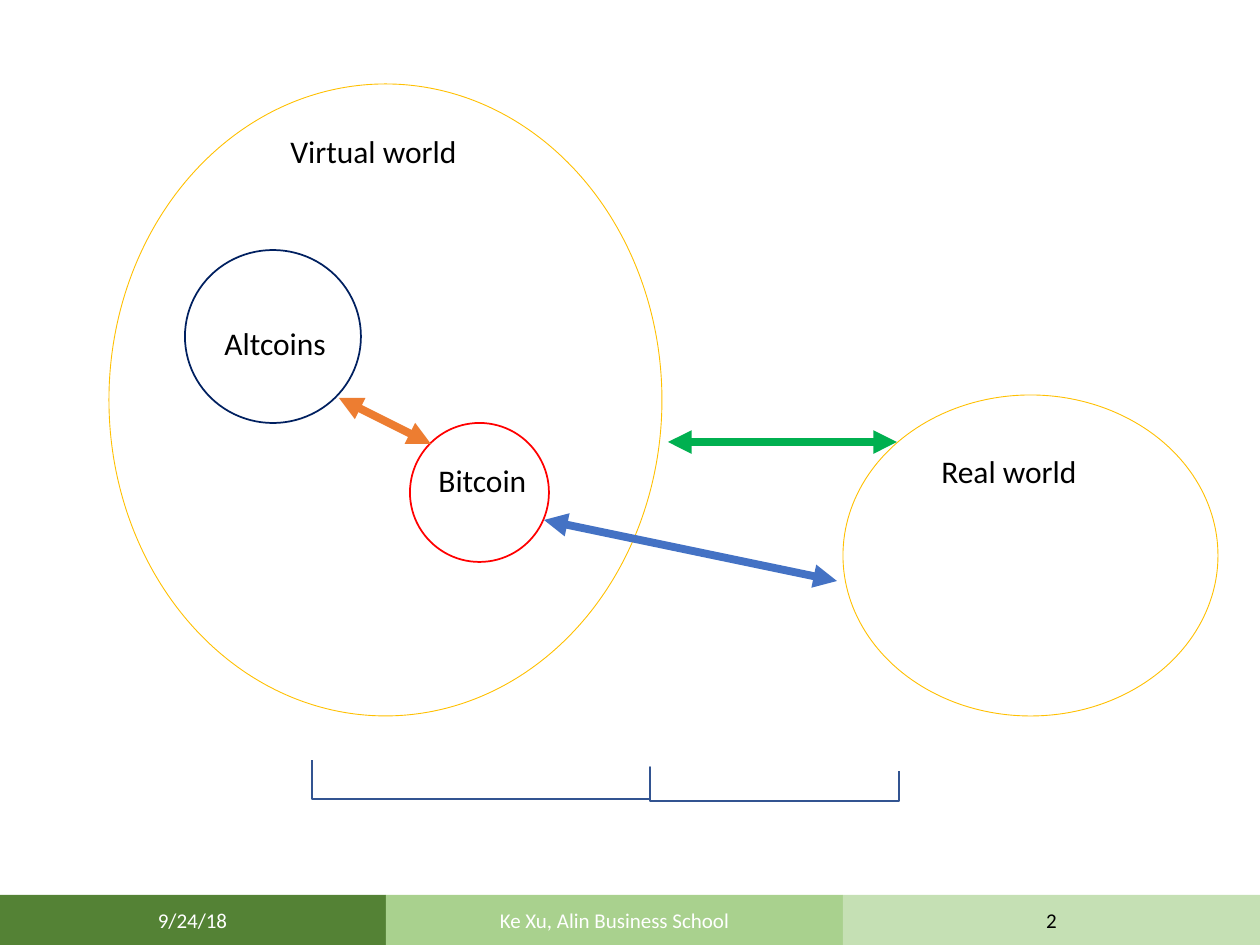
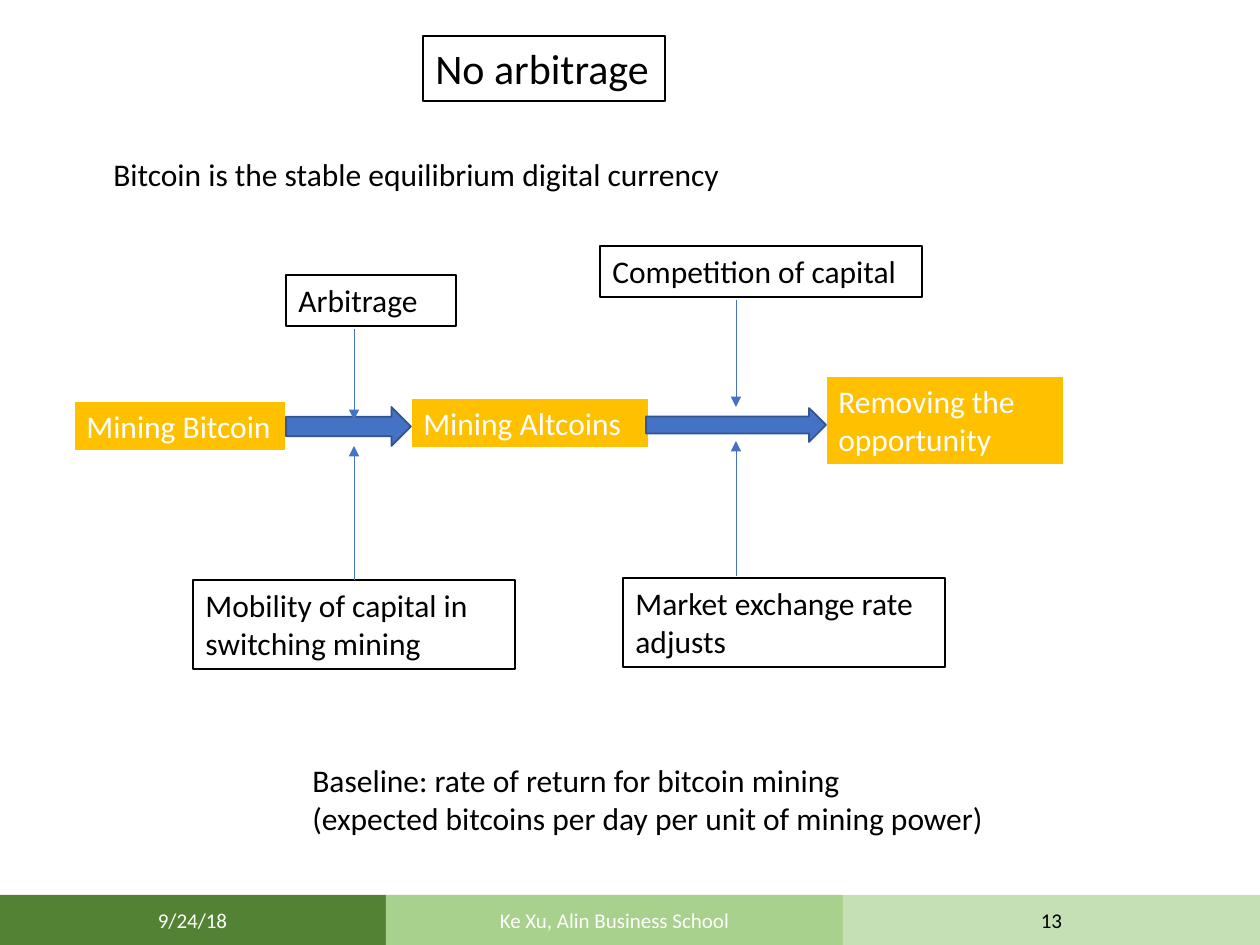
from lxml import etree
from pptx import Presentation
from pptx.dml.color import RGBColor
from pptx.enum.shapes import MSO_CONNECTOR, MSO_SHAPE
from pptx.enum.text import MSO_ANCHOR, PP_ALIGN
from pptx.oxml.ns import qn
from pptx.util import Pt

RECT, OVAL, ARROW = MSO_SHAPE.RECTANGLE, MSO_SHAPE.OVAL, MSO_SHAPE.RIGHT_ARROW
STRAIGHT = MSO_CONNECTOR.STRAIGHT
TOP, MIDDLE = MSO_ANCHOR.TOP, MSO_ANCHOR.MIDDLE
LEFT, CENTER = PP_ALIGN.LEFT, PP_ALIGN.CENTER

EMU_PER_PX = 914400 / 126
WIDTH, HEIGHT = 1260, 945
FONT = "Calibri"
COLORS = {
    "white": "FFFFFF", "black": "000000", "gold": "FFC000", "navy": "002060",
    "red": "FF0000", "orange": "ED7D31", "blue": "4472C4", "dark blue": "325491",
    "green": "00B050", "band dark": "548235", "band mid": "A9D18E",
    "band light": "C5E0B4",
}

# Footer: left edge, fill, text colour, text (None stands for the slide number)
FOOTER_TOP = 895
FOOTER = [
    (-1, "band dark", "white", "9/24/18"),
    (386, "band mid", "white", "Ke Xu, Alin Business School"),
    (843, "band light", "black", None),
]

# Worlds slide: boxes are (left, top, width, height)
WORLD_LABELS = [
    ("Real world", (929, 446, 290, 50)),
    ("Virtual world", (278, 126, 290, 50)),
    ("Altcoins", (212, 318, 142, 50)),
    ("Bitcoin", (426, 455, 142, 50)),
]
CIRCLES = [
    ((109, 84, 553, 632), "gold", 0.5),
    ((185, 250, 176, 173), "navy", 1),
    ((843, 395, 375, 321), "gold", 0.5),
    ((410, 423, 139, 139), "red", 1),
]
EXCHANGES = [
    ((339, 398), (431, 444), "orange"),
    ((544, 520), (837, 581), "blue"),
    ((668, 442), (897, 442), "green"),
]
BRACKET = [(312, 760), (312, 799), (650, 799), (650, 767),
           (650, 801), (899, 801), (899, 771)]

# Arbitrage slide
TITLE = ("No arbitrage", (423, 36, 242, 65))
NOTES = [
    ("Bitcoin is the stable equilibrium digital currency", (101, 149, 644, 50)),
    ("Baseline: rate of return for bitcoin mining\n"
     "(expected bitcoins per day per unit of mining power)", (300, 755, 708, 89)),
]
STEPS = [
    ("Mining Bitcoin", (74, 401, 212, 50)),
    ("Mining Altcoins", (411, 398, 238, 50)),
    ("Removing the opportunity", (826, 376, 238, 89)),
]
STEP_ARROWS = [(286, 407, 125, 39), (646, 408, 180, 34)]
# Each cause: text, box, arrow x, arrow start y, arrow end y
CAUSES = [
    ("Arbitrage", (286, 275, 170, 51), 354, 329, 420),
    ("Competition of capital", (600, 246, 322, 51), 736, 300, 407),
    ("Mobility of capital in switching mining", (193, 580, 322, 89), 354, 580, 446),
    ("Market exchange rate adjusts", (623, 578, 322, 89), 736, 576, 441),
]


def px(*lengths):
    return [round(n * EMU_PER_PX) for n in lengths]


def rgb(name):
    return RGBColor.from_string(COLORS[name])


def set_line(sp, color, width):
    sp.line.color.rgb = rgb(color)
    sp.line.width = Pt(width)


def paint(sp, fill=None, line=None, width=1):
    sp.shadow.inherit = False
    if fill:
        sp.fill.solid()
        sp.fill.fore_color.rgb = rgb(fill)
    else:
        sp.fill.background()
    if line:
        set_line(sp, line, width)
    else:
        sp.line.fill.background()
    return sp


def add_shape(slide, kind, box, **look):
    return paint(slide.shapes.add_shape(kind, *px(*box)), **look)


def write(sp, text, size=18, color="black", align=LEFT, anchor=TOP):
    tf = sp.text_frame
    tf.word_wrap = True
    tf.vertical_anchor = anchor
    for i, line in enumerate(text.split("\n")):
        p = tf.paragraphs[0] if i == 0 else tf.add_paragraph()
        p.alignment = align
        r = p.add_run()
        r.text = line
        r.font.name, r.font.size = FONT, Pt(size)
        r.font.color.rgb = rgb(color)


def add_label(slide, text, box):
    write(slide.shapes.add_textbox(*px(*box)), text)


def add_arrow(slide, start, end, color, width, ends=("tailEnd",)):
    """ends takes headEnd (at start) before tailEnd (at end)."""
    cxn = slide.shapes.add_connector(STRAIGHT, *px(*start, *end))
    set_line(cxn, color, width)
    for tag in ends:
        etree.SubElement(cxn.line._get_or_add_ln(), qn(f"a:{tag}"), type="triangle")
    etree.SubElement(cxn._element.spPr, qn("a:effectLst"))
    return cxn


def add_slide(prs, number):
    slide = prs.slides.add_slide(prs.slide_layouts[6])
    rights = [band[0] for band in FOOTER[1:]] + [WIDTH]
    for (left, fill, color, text), right in zip(FOOTER, rights):
        box = (left, FOOTER_TOP, right - left, HEIGHT - FOOTER_TOP)
        sp = add_shape(slide, RECT, box, fill=fill)
        write(sp, text or str(number), size=12, color=color,
              align=CENTER, anchor=MIDDLE)
    return slide


def build_worlds(prs):
    slide = add_slide(prs, 2)
    for text, box in WORLD_LABELS:
        add_label(slide, text, box)
    for box, color, width in CIRCLES:
        add_shape(slide, OVAL, box, line=color, width=width)
    for start, end, color in EXCHANGES:
        add_arrow(slide, start, end, color, 4.5, ends=("headEnd", "tailEnd"))
    outline = slide.shapes.build_freeform(*BRACKET[0], scale=EMU_PER_PX)
    outline.add_line_segments(BRACKET[1:], close=False)
    paint(outline.convert_to_shape(), line="dark blue")


def build_arbitrage(prs):
    slide = add_slide(prs, 13)
    text, box = TITLE
    write(add_shape(slide, RECT, box, fill="white", line="black"), text, size=24)
    for text, box in NOTES:
        add_label(slide, text, box)
    for text, box in STEPS:
        sp = add_shape(slide, RECT, box, fill="gold", line="white", width=1.5)
        write(sp, text, color="white")
    for box in STEP_ARROWS:
        add_shape(slide, ARROW, box, fill="blue", line="dark blue")
    for text, box, x, start, end in CAUSES:
        sp = add_shape(slide, RECT, box, fill="white", line="black")
        write(sp, text)
        cxn = add_arrow(slide, (x, start), (x, end), "blue", 0.5)
        left, top, width, _ = box
        if (x, start) == (left + width / 2, top):
            cxn.begin_connect(sp, 0)


def main():
    prs = Presentation()
    prs.slide_width, prs.slide_height = px(WIDTH, HEIGHT)
    build_worlds(prs)
    build_arbitrage(prs)
    prs.save("out.pptx")


if __name__ == "__main__":
    main()
